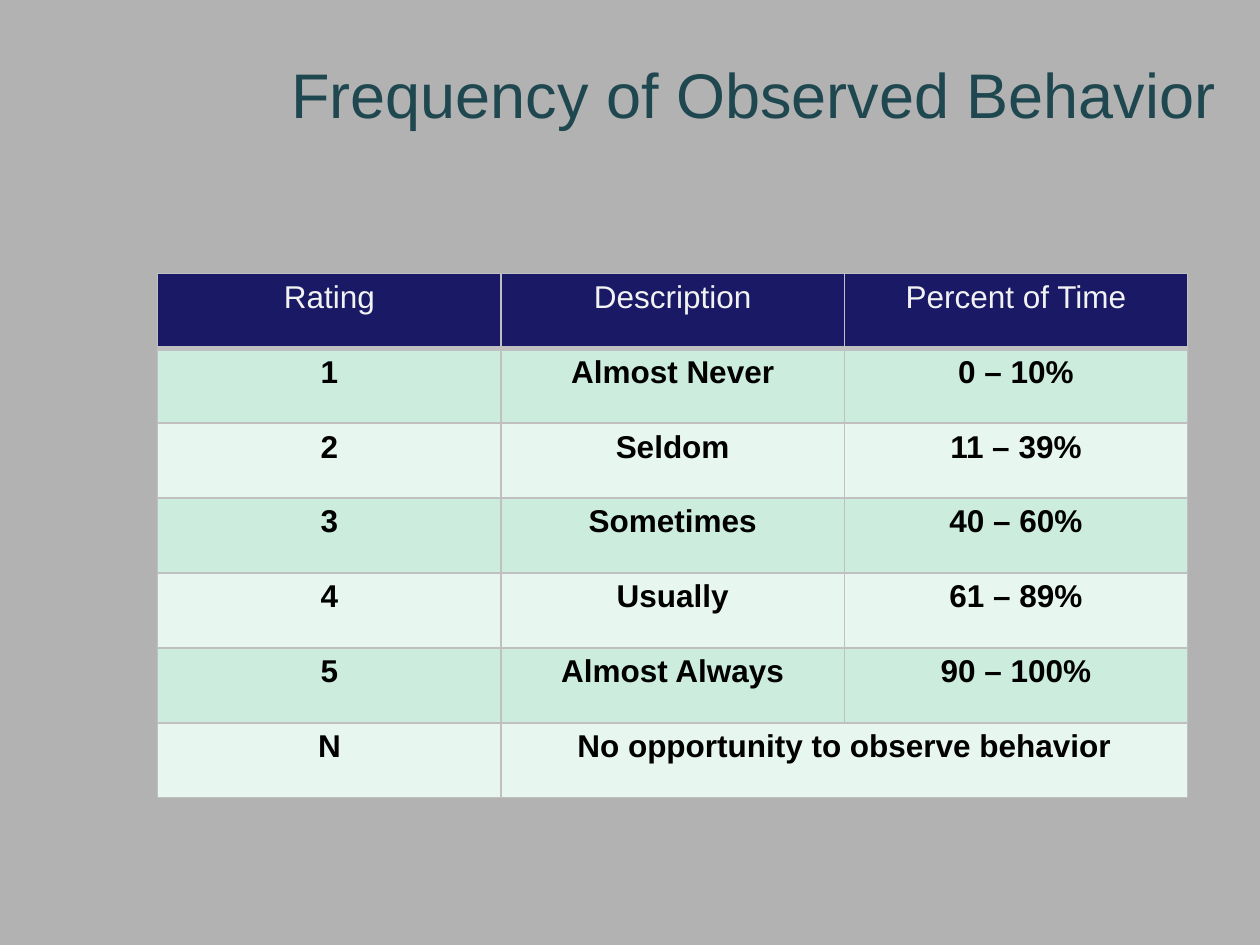
from dataclasses import dataclass

from lxml import etree
from pptx import Presentation
from pptx.dml.color import RGBColor
from pptx.enum import text
from pptx.oxml import ns
from pptx.util import Cm, Pt

COLORS = {
    "background": "B2B2B2",
    "title": "1F474F",
    "header": "191966",
    "header_text": "F2F2F2",
    "odd_row": "CCECDE",
    "even_row": "E7F6EF",
    "body_text": "000000",
    "border": "C0C0C0",
}
FONT = "Arial"
HEADINGS = ("Rating", "Description", "Percent of Time")
COLUMN_WIDTH = Cm(6.92)
ROW_HEIGHT = Cm(1.51)


@dataclass(frozen=True)
class Rating:
    code: str
    description: str
    percent: str = ""


@dataclass(frozen=True)
class CellStyle:
    fill: str
    color: str
    bold: bool
    bottom_border: int = 1


RATINGS = (
    Rating("1", "Almost Never", "0 – 10%"),
    Rating("2", "Seldom", "11 – 39%"),
    Rating("3", "Sometimes", "40 – 60%"),
    Rating("4", "Usually", "61 – 89%"),
    Rating("5", "Almost Always", "90 – 100%"),
    Rating("N", "No opportunity to observe behavior"),
)
HEADER_STYLE = CellStyle("header", "header_text", False, 3)
ROW_STYLES = (
    CellStyle("odd_row", "body_text", True),
    CellStyle("even_row", "body_text", True),
)


def rgb(name: str) -> RGBColor:
    return RGBColor.from_string(COLORS[name])


def write(frame, words: str, size: int, color: str, align, bold: bool = False) -> None:
    frame.text = words
    paragraph = frame.paragraphs[0]
    paragraph.alignment = align
    for run in paragraph.runs:
        run.font.name = FONT
        run.font.size = Pt(size)
        run.font.bold = bold
        run.font.color.rgb = rgb(color)


def add_borders(cell, bottom: int) -> None:
    properties = cell._tc.get_or_add_tcPr()
    widths = {"lnL": 1, "lnR": 1, "lnT": 1, "lnB": bottom}
    for position, (side, width) in enumerate(widths.items()):
        line = etree.Element(ns.qn(f"a:{side}"), w=str(Pt(width)))
        fill = etree.SubElement(line, ns.qn("a:solidFill"))
        etree.SubElement(fill, ns.qn("a:srgbClr"), val=COLORS["border"])
        properties.insert(position, line)


def fill_row(table, index: int, words: tuple[str, ...], style: CellStyle) -> None:
    for column, entry in enumerate(words):
        cell = table.cell(index, column)
        cell.fill.solid()
        cell.fill.fore_color.rgb = rgb(style.fill)
        add_borders(cell, style.bottom_border)
        if entry:
            write(cell.text_frame, entry, 18, style.color,
                  text.PP_ALIGN.CENTER, style.bold)


def add_title(slide) -> None:
    title = slide.shapes.add_textbox(Cm(5.08), Cm(0.2), Cm(19.68), Cm(3.38)).text_frame
    title.word_wrap = True
    title.vertical_anchor = text.MSO_ANCHOR.MIDDLE
    write(title, "Frequency of Observed Behavior", 36, "title", text.PP_ALIGN.RIGHT)


def add_ratings(slide) -> None:
    row_count = len(RATINGS) + 1
    table = slide.shapes.add_table(
        row_count, len(HEADINGS), Cm(3.18), Cm(5.51),
        COLUMN_WIDTH * len(HEADINGS), ROW_HEIGHT * row_count,
    ).table
    for column in table.columns:
        column.width = COLUMN_WIDTH
    for row in table.rows:
        row.height = ROW_HEIGHT
    fill_row(table, 0, HEADINGS, HEADER_STYLE)
    for index, rating in enumerate(RATINGS, start=1):
        words = (rating.code, rating.description, rating.percent)
        fill_row(table, index, words, ROW_STYLES[(index - 1) % 2])
        if not rating.percent:
            table.cell(index, 1).merge(table.cell(index, 2))


def main() -> None:
    deck = Presentation()
    deck.slide_width, deck.slide_height = Cm(25.4), Cm(19.05)
    slide = deck.slides.add_slide(deck.slide_layouts[6])
    slide.background.fill.solid()
    slide.background.fill.fore_color.rgb = rgb("background")
    add_title(slide)
    add_ratings(slide)
    deck.save("out.pptx")


if __name__ == "__main__":
    main()
